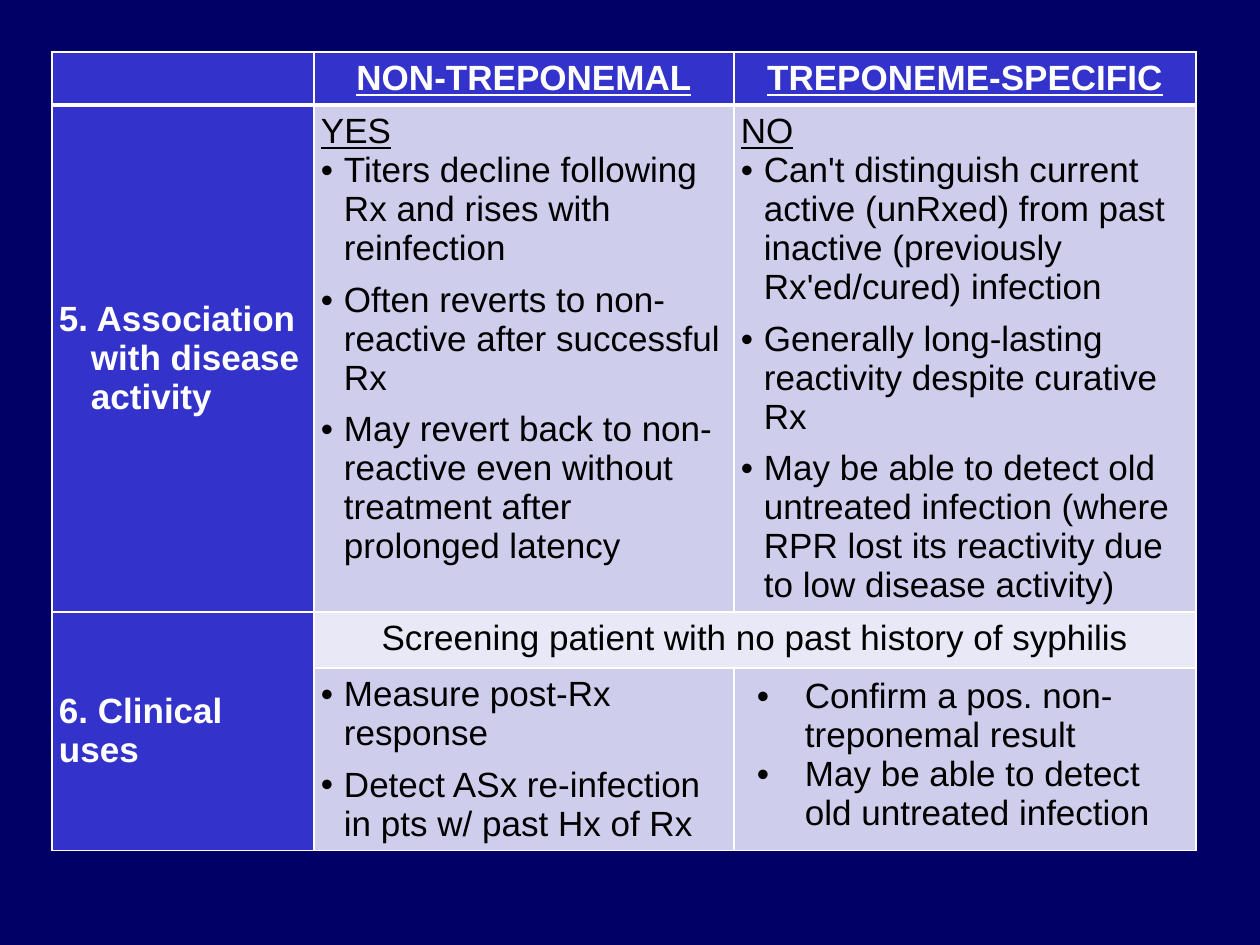
"""Build a slide comparing non-treponemal and treponeme-specific tests."""
from lxml import etree
from pptx import Presentation, util as u
from pptx.dml.color import RGBColor
from pptx.enum import text
from pptx.oxml.ns import qn

THEME = dict(bg="000066", head="3333CC", band="CECEEC", light="E8E8F6", line="FFFFFF",
             white="FEFEFE", black="000000", font="Arial", size=20, gap=7)


def px(n):
    return u.Emu(round(n * 914400 / 126))


def border(tc_pr, index, side, points):
    ln = etree.Element(qn(f"a:{side}"), w=str(u.Pt(points)))
    fill = etree.SubElement(ln, qn("a:solidFill"))
    etree.SubElement(fill, qn("a:srgbClr"), val=THEME["line"])
    tc_pr.insert(index, ln)


COLS = [262, 420, 462]
ROWS = [53, 506, 56, 182]
CELLS = {
    (0, 0): ("head", None, []),
    (0, 1): ("head", None, ["NON-TREPONEMAL"]),
    (0, 2): ("head", None, ["TREPONEME-SPECIFIC"]),
    (1, 0): ("head", None, ["5. Association with disease activity"]),
    (1, 1): ("band", "YES", [
        "Titers decline following Rx and rises with reinfection",
        "Often reverts to non-reactive after successful Rx",
        "May revert back to non-reactive even without treatment after prolonged latency"]),
    (1, 2): ("band", "NO", [
        "Can't distinguish current active (unRxed) from past inactive (previously Rx'ed/cured) infection",
        "Generally long-lasting reactivity despite curative Rx",
        "May be able to detect old untreated infection (where RPR lost its reactivity due to low disease activity)"]),
    (2, 0): ("head", None, ["6. Clinical uses"]),
    (2, 1): ("light", None, ["Screening patient with no past history of syphilis"]),
    (3, 1): ("band", None, ["Measure post-Rx response",
                            "Detect ASx re-infection in pts w/ past Hx of Rx"]),
    (3, 2): ("band", None, ["Confirm a pos. non-treponemal result",
                            "May be able to detect old untreated infection"]),
}

prs = Presentation()
prs.slide_width, prs.slide_height = px(1260), px(945)
s = prs.slides.add_slide(prs.slide_layouts[6])
s.background.fill.solid()
s.background.fill.fore_color.rgb = RGBColor.from_string(THEME["bg"])

frame = s.shapes.add_table(len(ROWS), len(COLS), px(52), px(52), px(sum(COLS)), px(sum(ROWS)))
table = frame.table
table.first_row = table.horz_banding = False
for col, width in zip(table.columns, COLS):
    col.width = px(width)
for row, height in zip(table.rows, ROWS):
    row.height = px(height)
table.cell(2, 0).merge(table.cell(3, 0))
table.cell(2, 1).merge(table.cell(2, 2))

for (row, col), (kind, answer, lines) in CELLS.items():
    cell = table.cell(row, col)
    cell.fill.solid()
    cell.fill.fore_color.rgb = RGBColor.from_string(THEME[kind])
    cell.margin_left = cell.margin_right = cell.margin_top = cell.margin_bottom = px(7)
    if (row, col) == (3, 2):
        cell.margin_top = px(9)
    if col == 0:
        cell.vertical_anchor = text.MSO_ANCHOR.MIDDLE
    tf = cell.text_frame
    tf.text = "\n".join(([answer] if answer else []) + lines)
    for i, p in enumerate(tf.paragraphs):
        is_answer = answer is not None and i == 0
        if row == 0 or kind == "light":
            p.alignment = text.PP_ALIGN.CENTER
        p_pr = p._p.get_or_add_pPr()
        if (row, col) == (1, 0):
            p_pr.set("marL", str(px(32)))
            p_pr.set("indent", str(px(-32)))
        if kind == "band" and not is_answer:
            margin, indent = (64, -48) if (row, col) == (3, 2) else (23, -23)
            p_pr.set("marL", str(px(margin)))
            p_pr.set("indent", str(px(indent)))
            if i > (1 if answer else 0) and (row, col) != (3, 2):
                p.space_before = u.Pt(THEME["gap"])
            etree.SubElement(p_pr, qn("a:buFont"), typeface=THEME["font"])
            etree.SubElement(p_pr, qn("a:buChar"), char="•")
        for r in p.runs:
            r.font.name = THEME["font"]
            r.font.size = u.Pt(THEME["size"])
            r.font.bold = kind == "head"
            r.font.underline = row == 0 or is_answer
            color = THEME["white" if kind == "head" else "black"]
            r.font.color.rgb = RGBColor.from_string(color)

for row in range(len(ROWS)):
    for col in range(len(COLS)):
        tc_pr = table.cell(row, col)._tc.get_or_add_tcPr()
        for i, side in enumerate(("lnL", "lnR", "lnT", "lnB")):
            border(tc_pr, i, side, 3 if (row, side) in ((0, "lnB"), (1, "lnT")) else 1)

prs.save("out.pptx")
